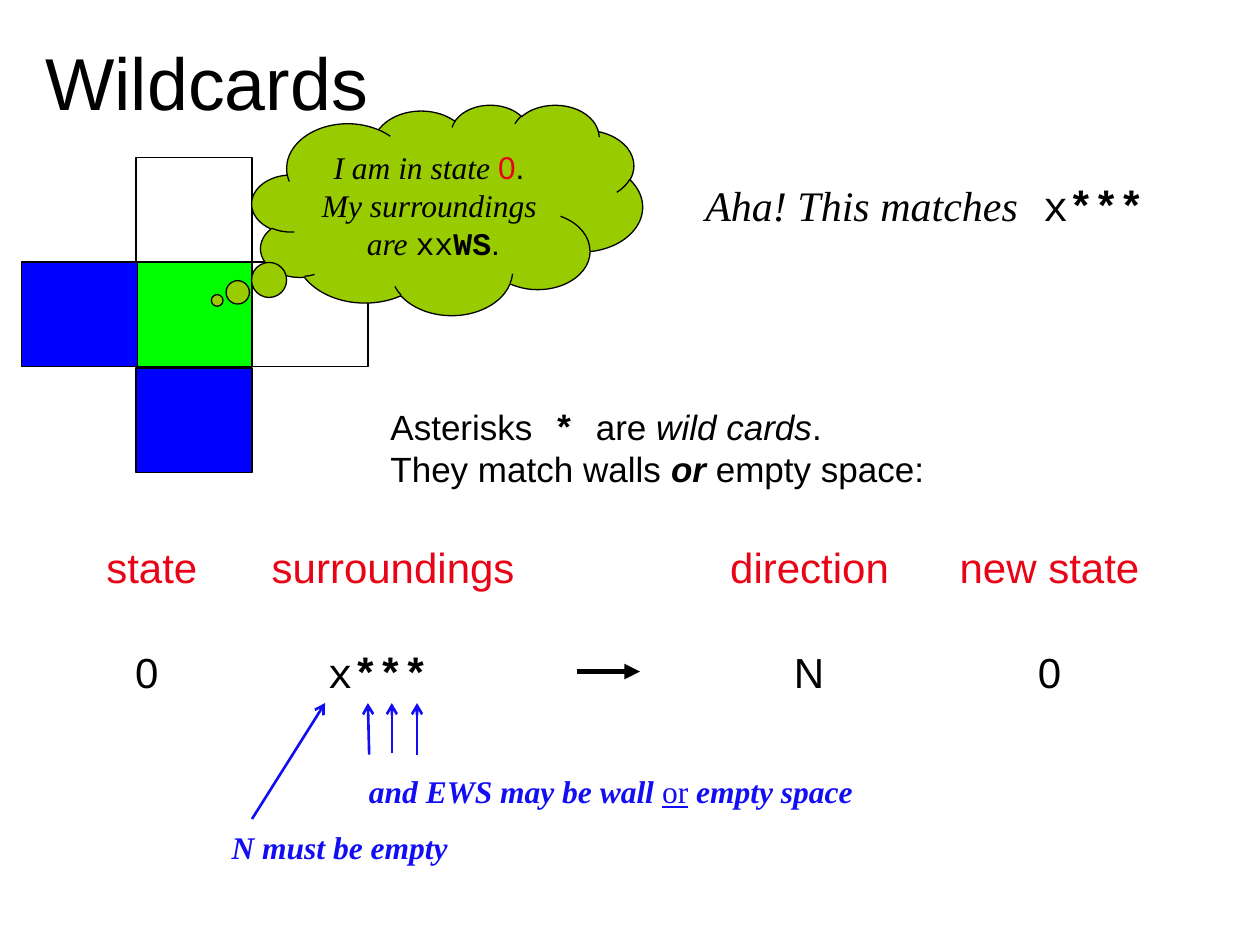
import pptx
import pptx.util
import pptx.dml.color
import pptx.enum.shapes
import pptx.enum.text
import pptx.oxml
import pptx.oxml.ns
from dataclasses import dataclass, field

Inches, Pt = pptx.util.Inches, pptx.util.Pt
Shape = pptx.enum.shapes.MSO_SHAPE
Align = pptx.enum.text.PP_ALIGN
Anchor = pptx.enum.text.MSO_ANCHOR
Fit = pptx.enum.text.MSO_AUTO_SIZE


@dataclass(frozen=True)
class Theme:
    black: str = "000000"
    red: str = "E80416"
    ink: str = "120DF3"
    wall: str = "0000FF"
    bot: str = "00FF00"
    cloud: str = "99CC00"
    sans: str = "Arial"
    mono: str = "Courier New"
    serif: str = "Times New Roman"
    title: int = 42
    big: int = 24
    mid: int = 20
    small: int = 18


T = Theme()
WIDE, HIGH = 10, 7.5
UNIT = WIDE / 120  # grid of 120 columns by 90 rows


@dataclass(frozen=True)
class Box:
    """Place on the grid, in columns and rows."""
    col: float
    row: float
    cols: float
    rows: float

    def place(self) -> list:
        return [Inches(round(n * UNIT, 2))
                for n in (self.col, self.row, self.cols, self.rows)]


@dataclass(frozen=True)
class Run:
    text: str
    face: str = T.sans
    color: str = T.black
    form: dict = field(default_factory=dict)
    turn: bool = False  # starts a new line


@dataclass(frozen=True)
class Arrow:
    start: tuple
    end: tuple
    color: str = T.ink
    width: float = 1.5
    head: str = "arrow"


BOLD, SLANT = {"bold": True}, {"italic": True}
BOTH = BOLD | SLANT


def paint(color: str) -> pptx.dml.color.RGBColor:
    return pptx.dml.color.RGBColor.from_string(color)


def write(frame, lines: list, size: int, align=Align.LEFT, space=None) -> None:
    for i, runs in enumerate(lines):
        para = frame.paragraphs[0] if i == 0 else frame.add_paragraph()
        para.alignment, para.line_spacing = align, space
        for run in runs:
            if run.turn:
                para.add_line_break()
            part = para.add_run()
            part.text = run.text
            look = {"size": Pt(size), "name": run.face} | run.form
            for name, value in look.items():
                setattr(part.font, name, value)
            part.font.color.rgb = paint(run.color)


def label(slide, box: Box, runs: list, size: int, align=Align.LEFT,
          wrap: bool = True, space=None) -> None:
    frame = slide.shapes.add_textbox(*box.place()).text_frame
    frame.word_wrap, frame.auto_size = wrap, Fit.SHAPE_TO_FIT_TEXT
    write(frame, [runs], size, align, space)


def block(slide, box: Box, color, kind=Shape.RECTANGLE):
    shape = slide.shapes.add_shape(kind, *box.place())
    shape.shadow.inherit = False
    if color:
        shape.fill.solid()
        shape.fill.fore_color.rgb = paint(color)
    else:
        shape.fill.background()
    shape.line.color.rgb = paint(T.black)
    shape.line.width = Pt(0.75)
    return shape


def point(slide, arrow: Arrow) -> None:
    ends = [Inches(round(n * UNIT, 2)) for n in arrow.start + arrow.end]
    link = slide.shapes.add_connector(
        pptx.enum.shapes.MSO_CONNECTOR.STRAIGHT, *ends)
    link.line.color.rgb = paint(arrow.color)
    link.line.width = Pt(arrow.width)
    props = link._element.spPr
    tail = pptx.oxml.parse_xml(
        f'<a:tailEnd {pptx.oxml.ns.nsdecls("a")} type="{arrow.head}"/>')
    props.find(pptx.oxml.ns.qn("a:ln")).append(tail)
    props.append(pptx.oxml.parse_xml(
        f'<a:effectLst {pptx.oxml.ns.nsdecls("a")}/>'))


# Cells: (column, row) in the cross, and fill
CELLS = [(1, 1, T.bot), (0, 1, T.wall), (1, 0, None), (1, 2, T.wall), (2, 1, None)]
STARS = [Run("x", T.mono), Run("***", T.mono, form=BOLD)]
# Rule columns: heading, its left and width, then value, its left and width
RULE = [
    ("state", 5.4, 18.1, [Run("0")], 9, 10),
    ("surroundings", 22, 31, STARS, 27, 18),
    ("direction", 68, 18.1, [Run("N")], 68, 18),
    ("new state", 88, 24, [Run("0")], 91, 18),
]
ARROWS = [
    Arrow((55, 64), (61, 64), T.black, 3, "triangle"),
    Arrow((35.2, 71.9), (35, 67)),
    Arrow((37.3, 71.8), (37.3, 67)),
    Arrow((39.7, 71.9), (39.7, 67)),
    Arrow((24, 78), (31, 67)),
]
CLOUD = [
    [Run("I am in state ", T.serif, form=SLANT), Run("0", color=T.red), Run(". ")],
    [Run("My surroundings ", T.serif, form=SLANT)],
    [Run("are ", T.serif, form=SLANT), Run("xx", T.mono),
     Run("WS", T.mono, form=BOLD), Run(".")],
]
WILD = [
    Run("Asterisks"), Run(" * ", T.mono, form=BOLD), Run("are "),
    Run("wild cards", form=SLANT), Run("."),
    Run("They match walls ", turn=True), Run("or", form=BOTH),
    Run(" empty space:"),
]


def main() -> None:
    deck = pptx.Presentation()
    deck.slide_width, deck.slide_height = Inches(WIDE), Inches(HIGH)
    slide = deck.slides.add_slide(deck.slide_layouts[5])

    # Title
    title = slide.shapes.title
    title.left, title.top, title.width, title.height = Box(3.1, 2.9, 39, 9.6).place()
    title.text_frame.vertical_anchor = Anchor.MIDDLE
    title.text_frame.auto_size = Fit.NONE
    write(title.text_frame, [[Run("Wildcards")]], T.title)

    # Cross of cells around the robot
    for col, row, color in CELLS:
        block(slide, Box(2 + 11 * col, 15 + 10 * row, 11, 10), color)

    # Wild card remark
    label(slide, Box(36, 38, 59, 9.2), WILD, T.mid)

    # Rule: headings above values
    for head, left, width, value, start, span in RULE:
        label(slide, Box(left, 51, width, 6), [Run(head, color=T.red)],
              T.big, Align.CENTER)
        label(slide, Box(start, 61, span, 6), value, T.big, Align.CENTER)
    for arrow in ARROWS:
        point(slide, arrow)

    # Thought cloud
    cloud = block(slide, Box(24, 10, 37.2, 20), T.cloud, Shape.CLOUD_CALLOUT)
    cloud.adjustments[0], cloud.adjustments[1] = -0.589, 0.431
    cloud.text_frame.word_wrap = False
    cloud.text_frame.vertical_anchor = Anchor.MIDDLE
    write(cloud.text_frame, CLOUD, T.small, Align.CENTER)

    # Match and notes on the pattern
    label(slide, Box(66, 17, 52, 5.5),
          [Run("Aha! This matches", T.serif, form=SLANT), Run(" ", T.mono), *STARS],
          T.big, space=0.9)
    label(slide, Box(34, 73, 71, 4.8),
          [Run("and EWS may be wall ", T.serif, T.ink, BOTH),
           Run("or", T.serif, T.ink, {"underline": True}),
           Run(" empty space", T.serif, T.ink, BOTH)], T.small)
    label(slide, Box(20.9, 78.2, 23, 4.8),
          [Run("N must be empty", T.serif, T.ink, BOTH)], T.small, wrap=False)

    deck.save("out.pptx")


if __name__ == "__main__":
    main()
